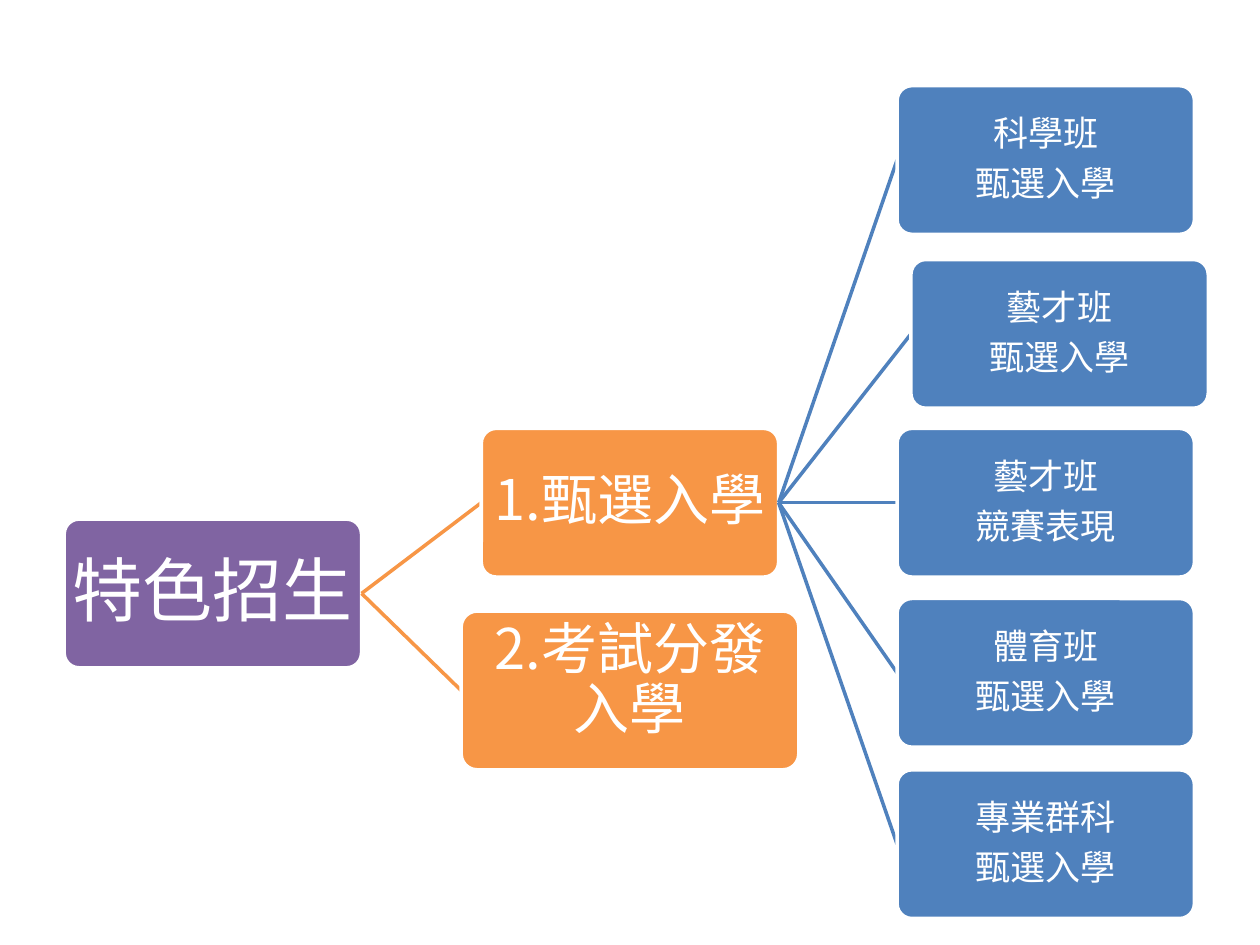
from dataclasses import dataclass
from typing import Optional

from lxml.etree import SubElement
from pptx import Presentation
from pptx.dml.color import RGBColor
from pptx.enum.shapes import MSO_CONNECTOR, MSO_SHAPE
from pptx.enum.text import MSO_ANCHOR, PP_ALIGN
from pptx.oxml.ns import qn
from pptx.shapes.autoshape import Shape
from pptx.shapes.shapetree import SlideShapes
from pptx.util import Inches, Length, Pt

PURPLE = RGBColor(0x80, 0x64, 0xA2)
ORANGE = RGBColor(0xF7, 0x96, 0x46)
BLUE = RGBColor(0x4F, 0x81, 0xBD)
WHITE = RGBColor(0xFF, 0xFF, 0xFF)

FONT = "Noto Sans CJK SC"
BOX_WIDTH, BOX_HEIGHT = 2.36, 1.18
LEFT_SITE, RIGHT_SITE = 1, 3  # connection sites of a rounded rectangle


@dataclass(frozen=True)
class Level:
    color: RGBColor
    size: int
    inset: float


# The rounded corners already add a little to each inset
ROOT = Level(PURPLE, 40, 0.02)
ROUTE = Level(ORANGE, 32, 0.02)
PROGRAM = Level(BLUE, 20, 0.01)


@dataclass(frozen=True)
class Node:
    level: Level
    lines: tuple[str, ...]
    left: float
    top: float
    width: float = BOX_WIDTH
    height: float = BOX_HEIGHT
    spacing: float | Length = 0.9
    children: tuple["Node", ...] = ()


# Admission tree
PROGRAMS = (
    Node(PROGRAM, ("科學班", "甄選入學"), 7.12, 0.68),
    Node(PROGRAM, ("藝才班", "甄選入學"), 7.23, 2.06),
    Node(PROGRAM, ("藝才班", "競賽表現"), 7.12, 3.4),
    Node(PROGRAM, ("體育班", "甄選入學"), 7.12, 4.75),
    Node(PROGRAM, ("專業群科", "甄選入學"), 7.12, 6.11),
)
SELECTION = Node(ROUTE, ("1.甄選入學",), 3.82, 3.4, children=PROGRAMS)
EXAM = Node(ROUTE, ("2.考試分發", "入學"), 3.66, 4.85, 2.68, 1.26, Pt(23))
ADMISSION = Node(ROOT, ("特色招生",), 0.51, 4.12, children=(SELECTION, EXAM))


def set_all(target: object, values: dict) -> None:
    for name, value in values.items():
        setattr(target, name, value)


def write_lines(box: Shape, node: Node) -> None:
    level = node.level
    frame = box.text_frame
    inset = Inches(level.inset)
    set_all(frame, {
        "word_wrap": True, "vertical_anchor": MSO_ANCHOR.MIDDLE,
        "margin_left": inset, "margin_right": inset,
        "margin_top": inset, "margin_bottom": inset,
    })
    for index, line in enumerate(node.lines):
        paragraph = frame.add_paragraph() if index else frame.paragraphs[0]
        set_all(paragraph, {
            "alignment": PP_ALIGN.CENTER, "line_spacing": node.spacing,
            "space_after": Pt(level.size * 0.35),
        })
        run = paragraph.add_run()
        run.text = line
        set_all(run.font, {"name": FONT, "size": Pt(level.size)})
        run.font.color.rgb = WHITE
        # East Asian typeface
        SubElement(run._r.get_or_add_rPr(), qn("a:ea"), typeface=FONT)


def draw_box(shapes: SlideShapes, node: Node) -> Shape:
    box = shapes.add_shape(
        MSO_SHAPE.ROUNDED_RECTANGLE, Inches(node.left), Inches(node.top),
        Inches(node.width), Inches(node.height))
    box.adjustments[0] = 0.1
    box.shadow.inherit = False
    box.fill.solid()
    box.fill.fore_color.rgb = node.level.color
    box.line.color.rgb = WHITE
    box.line.width = Pt(2)
    write_lines(box, node)
    return box


def draw_tree(shapes: SlideShapes, node: Node,
              parent: Optional[Shape] = None) -> None:
    # The link goes in first so that the box covers its end
    link = None
    if parent is not None:
        link = shapes.add_connector(MSO_CONNECTOR.STRAIGHT, 0, 0, 0, 0)
        link.line.color.rgb = node.level.color
        link.line.width = Pt(2)
        SubElement(link._element.spPr, qn("a:effectLst"))
    box = draw_box(shapes, node)
    if link is not None:
        link.begin_connect(parent, RIGHT_SITE)
        link.end_connect(box, LEFT_SITE)
    for child in node.children:
        draw_tree(shapes, child, box)


def main() -> None:
    deck = Presentation()
    set_all(deck, {"slide_width": Inches(10), "slide_height": Inches(7.5)})
    slide = deck.slides.add_slide(deck.slide_layouts[6])
    draw_tree(slide.shapes, ADMISSION)
    deck.save("out.pptx")


if __name__ == "__main__":
    main()
